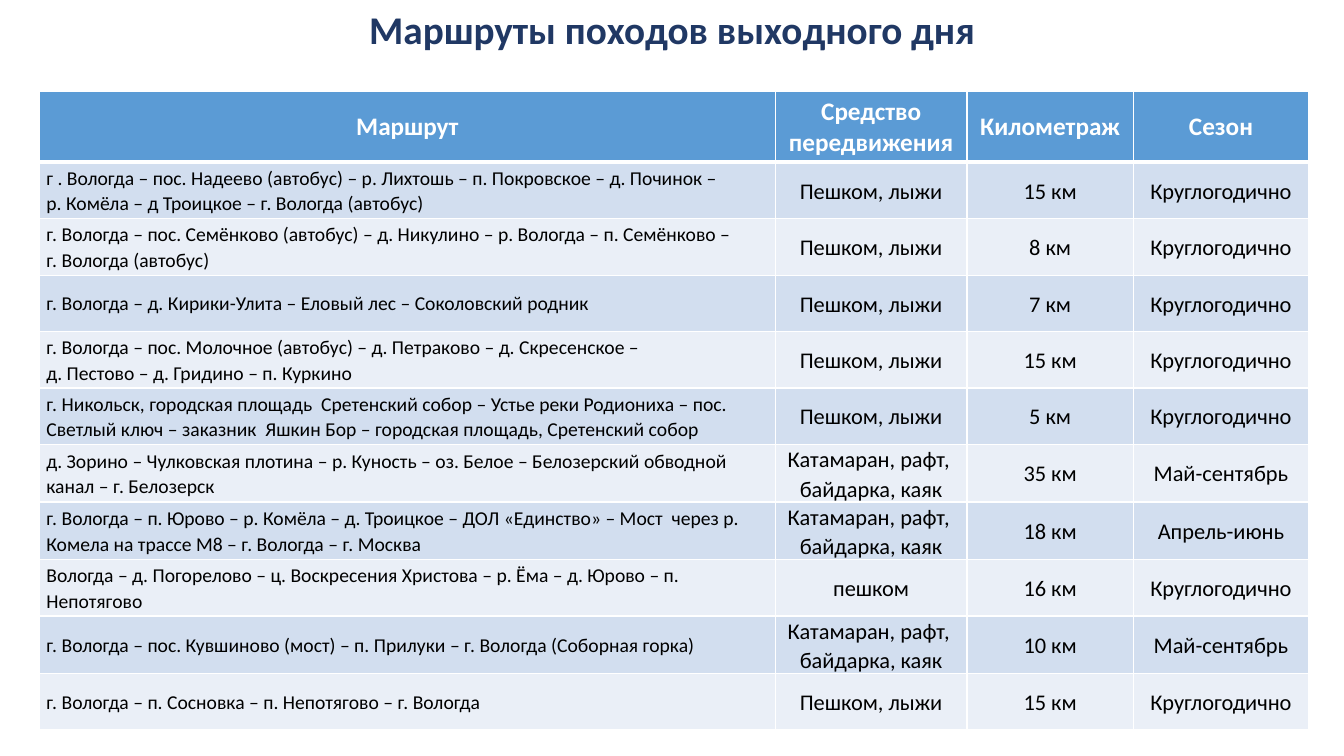
from copy import deepcopy
from dataclasses import dataclass

from lxml.etree import SubElement
from pptx import Presentation
from pptx.dml.color import RGBColor
from pptx.enum.text import MSO_ANCHOR, PP_ALIGN
from pptx.oxml.ns import qn
from pptx.slide import Slide
from pptx.table import _Cell
from pptx.text.text import TextFrame
from pptx.util import Inches, Pt

NAVY = RGBColor(0x20, 0x38, 0x64)
BLUE = RGBColor(0x5B, 0x9B, 0xD5)
PALE_BLUE = RGBColor(0xD2, 0xDE, 0xEF)
PALEST_BLUE = RGBColor(0xEA, 0xEF, 0xF7)
WHITE = RGBColor(0xFF, 0xFF, 0xFF)
BLACK = RGBColor(0x00, 0x00, 0x00)

FONT = "Calibri"
COLUMN_WIDTHS = (7.3, 1.9, 1.65, 1.74)
HEADER_HEIGHT = 0.55
ROUTE_HEIGHT = 0.56
HEADINGS = ("Маршрут", "Средство передвижения", "Километраж", "Сезон")

ON_FOOT_OR_SKI = ("Пешком, лыжи",)
BY_WATER = ("Катамаран, рафт, ", "байдарка, каяк")
ALL_YEAR = "Круглогодично"


@dataclass(frozen=True)
class Route:
    stops: str
    kilometres: int
    transport: tuple[str, ...] = ON_FOOT_OR_SKI
    season: str = ALL_YEAR


ROUTES = (
    Route("г . Вологда – пос. Надеево (автобус) – р. Лихтошь – п. Покровское – д. Починок – \n"
          "р. Комёла – д Троицкое – г. Вологда (автобус)", 15),
    Route("г. Вологда – пос. Семёнково (автобус) – д. Никулино – р. Вологда – п. Семёнково – \n"
          "г. Вологда (автобус)", 8),
    Route("г. Вологда – д. Кирики-Улита – Еловый лес – Соколовский родник", 7),
    Route("г. Вологда – пос. Молочное (автобус) – д. Петраково – д. Скресенское – \n"
          "д. Пестово – д. Гридино – п. Куркино", 15),
    Route("г. Никольск, городская площадь  Сретенский собор – Устье реки Родиониха – пос. "
          "Светлый ключ – заказник  Яшкин Бор – городская площадь, Сретенский собор", 5),
    Route("д. Зорино – Чулковская плотина – р. Куность – оз. Белое – Белозерский обводной "
          "канал – г. Белозерск", 35, BY_WATER, "Май-сентябрь"),
    Route("г. Вологда – п. Юрово – р. Комёла – д. Троицкое – ДОЛ «Единство» – Мост  через р. "
          "Комела на трассе М8 – г. Вологда – г. Москва", 18, BY_WATER, "Апрель-июнь"),
    Route("Вологда – д. Погорелово – ц. Воскресения Христова – р. Ёма – д. Юрово – п. "
          "Непотягово", 16, ("пешком",)),
    Route("г. Вологда – пос. Кувшиново (мост) – п. Прилуки – г. Вологда (Соборная горка)",
          10, BY_WATER, "Май-сентябрь"),
    Route("г. Вологда – п. Сосновка – п. Непотягово – г. Вологда", 15),
)


def write_text(frame: TextFrame, *lines: str, size: int, color: RGBColor = BLACK,
               bold: bool = False, align: PP_ALIGN = PP_ALIGN.CENTER,
               spacing: float = 1.0) -> None:
    frame.word_wrap = True
    for index, line in enumerate(lines):
        paragraph = frame.add_paragraph() if index else frame.paragraphs[0]
        paragraph.text = line
        paragraph.alignment = align
        paragraph.line_spacing = spacing
        for run in paragraph.runs:
            run.font.name = FONT
            run.font.size = Pt(size)
            run.font.bold = bold
            run.font.color.rgb = color
        for line_break in paragraph._p.findall(qn("a:br")):
            line_break.insert(0, deepcopy(paragraph.runs[0]._r.rPr))


def style_cell(cell: _Cell, fill: RGBColor, top: int = 1, bottom: int = 1) -> None:
    cell.vertical_anchor = MSO_ANCHOR.MIDDLE
    properties = cell._tc.get_or_add_tcPr()
    for side, width in (("L", 1), ("R", 1), ("T", top), ("B", bottom)):
        border = SubElement(properties, qn(f"a:ln{side}"), w=str(Pt(width)))
        border_fill = SubElement(border, qn("a:solidFill"))
        SubElement(border_fill, qn("a:srgbClr"), val=str(WHITE))
    cell.fill.solid()
    cell.fill.fore_color.rgb = fill


def add_title(slide: Slide) -> None:
    title = slide.shapes.add_textbox(0, 0, Inches(13.33), Inches(0.54))
    write_text(title.text_frame, "Маршруты походов выходного дня",
               size=28, color=NAVY, bold=True)


def add_routes(slide: Slide) -> None:
    height = HEADER_HEIGHT + ROUTE_HEIGHT * len(ROUTES)
    schedule = slide.shapes.add_table(
        len(ROUTES) + 1, len(HEADINGS), Inches(0.39), Inches(0.91),
        Inches(sum(COLUMN_WIDTHS)), Inches(height)).table
    for column, width in zip(schedule.columns, COLUMN_WIDTHS):
        column.width = Inches(width)
    for number, row in enumerate(schedule.rows):
        row.height = Inches(ROUTE_HEIGHT if number else HEADER_HEIGHT)

    for cell, heading in zip(schedule.rows[0].cells, HEADINGS):
        style_cell(cell, BLUE, bottom=3)
        write_text(cell.text_frame, heading, size=18, color=WHITE, bold=True)

    for number, route in enumerate(ROUTES, start=1):
        entries = ((route.stops,), route.transport,
                   (f"{route.kilometres} км",), (route.season,))
        for column, lines in enumerate(entries):
            cell = schedule.cell(number, column)
            style_cell(cell, PALE_BLUE if number % 2 else PALEST_BLUE,
                       top=3 if number == 1 else 1)
            cell.margin_left = cell.margin_right = Inches(0.07)
            cell.margin_top = cell.margin_bottom = 0
            write_text(cell.text_frame, *lines, size=16 if column else 14,
                       align=PP_ALIGN.CENTER if column else PP_ALIGN.LEFT, spacing=1.07)


def main() -> None:
    presentation = Presentation()
    presentation.slide_width = Inches(13.33)
    presentation.slide_height = Inches(7.5)
    slide = presentation.slides.add_slide(presentation.slide_layouts[6])
    add_title(slide)
    add_routes(slide)
    presentation.save("out.pptx")


if __name__ == "__main__":
    main()
